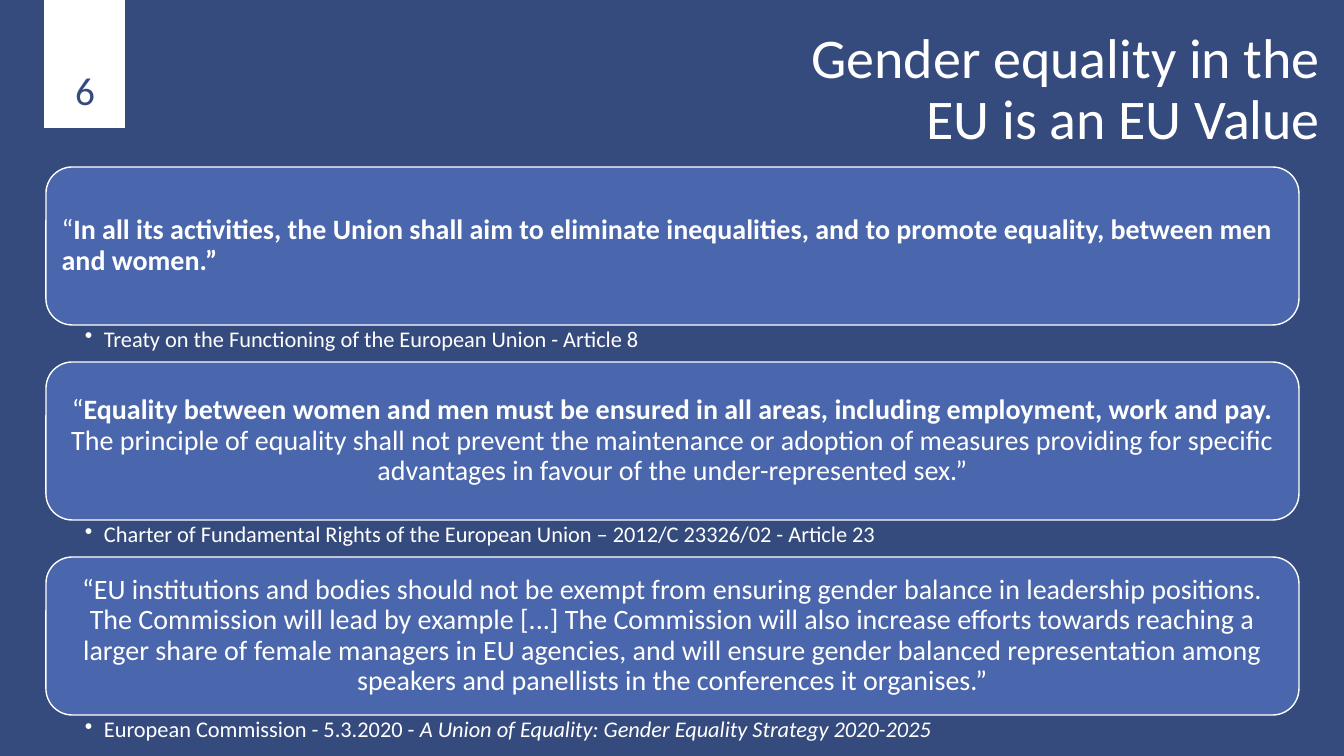
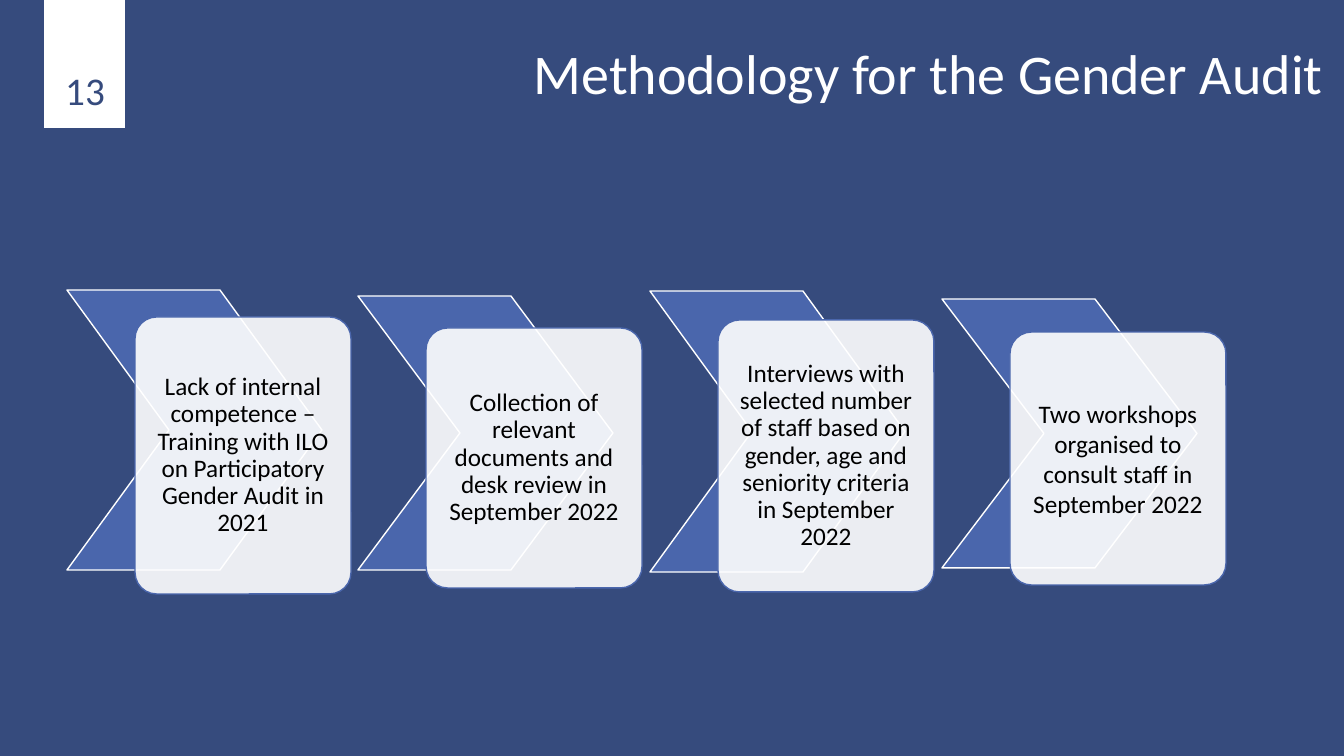
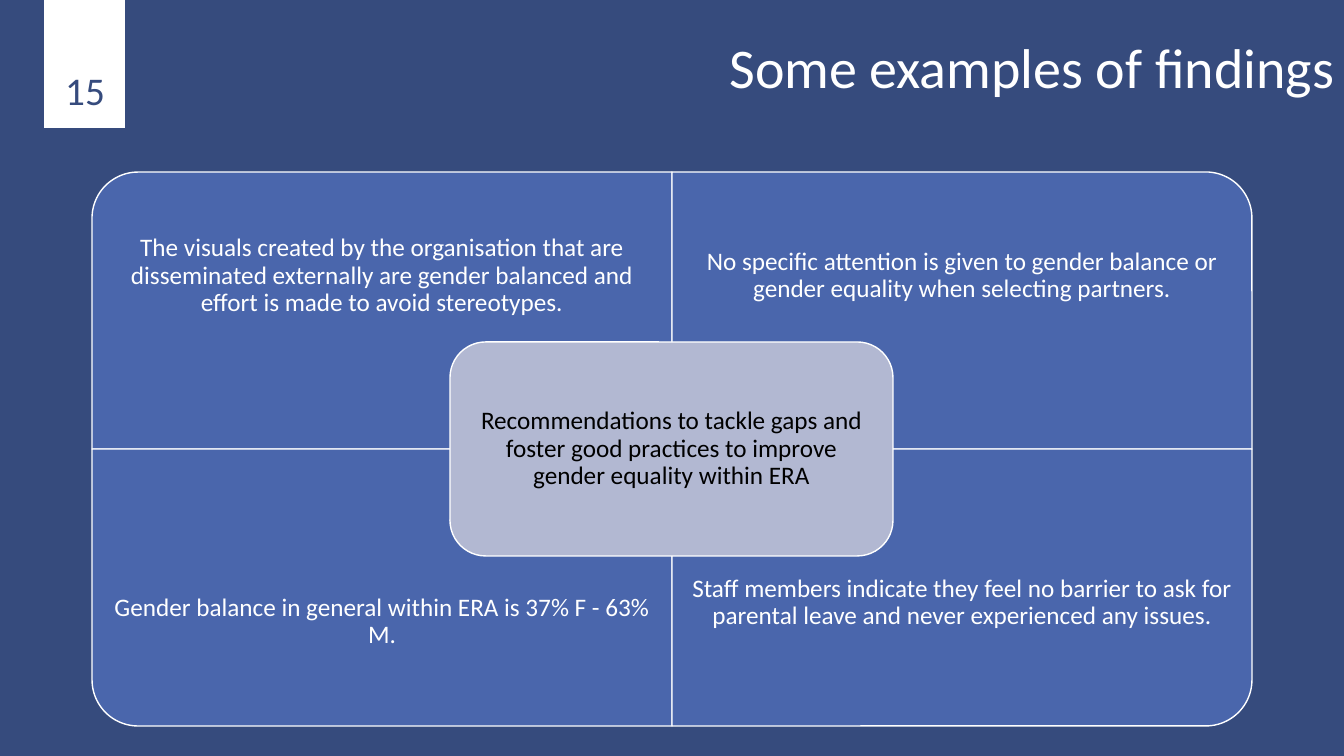
import pptx
import pptx.util
import pptx.dml.color
import pptx.enum.shapes
import pptx.enum.text
import pptx.oxml
import pptx.oxml.ns

EMU_PER_PX = 12192000 / 1344
FONT = "Calibri"
COLORS = {
    "navy": "364B7D",
    "blue": "4A66AC",
    "pale": "B2B8D2",
    "white": "FFFFFF",
    "black": "000000",
}
SHAPE = pptx.enum.shapes.MSO_SHAPE
ALIGN = pptx.enum.text.PP_ALIGN
ANCHOR = pptx.enum.text.MSO_ANCHOR


def px(n):
    return pptx.util.Emu(round(n * EMU_PER_PX))


def rgb(name):
    return pptx.dml.color.RGBColor.from_string(COLORS[name])


class Deck:
    def __init__(self):
        self.prs = pptx.Presentation()
        self.prs.slide_width, self.prs.slide_height = px(1344), px(756)
        fill = self.prs.slide_master.background.fill
        fill.solid()
        fill.fore_color.rgb = rgb("navy")
        self.s = None

    def slide(self, number, title, title_box):
        """Start a slide with its number tab and title."""
        self.s = self.prs.slides.add_slide(self.prs.slide_layouts[6])
        self.shape(SHAPE.RECTANGLE, (44, 0, 81, 128), "white", line=None)
        self.text((13, 61, 144, 67), str(number), 28, "navy", insets=(10, 5, 10, 5),
                  anchor=ANCHOR.TOP, spacing=1.0)
        self.text(title_box, title, 40, insets=(10, 5, 10, 5), align=ALIGN.RIGHT)

    def shape(self, kind, box, fill, line="white", adj=None, rotation=0, opacity=None):
        sp = self.s.shapes.add_shape(kind, *map(px, box))
        sp.shadow.inherit = False
        sp.rotation = rotation
        if adj is not None:
            sp.adjustments[0] = adj
        sp.fill.solid()
        sp.fill.fore_color.rgb = rgb(fill)
        if opacity is not None:
            color = sp.fill._xPr.find(".//" + pptx.oxml.ns.qn("a:srgbClr"))
            alpha = pptx.oxml.parse_xml(
                f'<a:alpha {pptx.oxml.ns.nsdecls("a")} val="{opacity * 1000}"/>')
            color.append(alpha)
        if line:
            sp.line.color.rgb = rgb(line)
            sp.line.width = pptx.util.Pt(1)
        else:
            sp.line.fill.background()
        return sp

    def text(self, box, runs, size, color="white", **style):
        sp = self.s.shapes.add_textbox(*map(px, box))
        return self.label(sp, runs, size, color, **style)

    def label(self, sp, runs, size, color="white", insets=(14, 14, 14, 14),
              align=ALIGN.CENTER, anchor=ANCHOR.MIDDLE, spacing=0.9, bullet=False):
        """Fill a shape with one paragraph; runs are a string or (text, style) pairs."""
        tf = sp.text_frame
        tf.word_wrap = True
        tf.vertical_anchor = anchor
        tf.margin_left, tf.margin_top, tf.margin_right, tf.margin_bottom = map(px, insets)
        p = tf.paragraphs[0]
        if bullet:
            pPr = p._p.get_or_add_pPr()
            pPr.set("marL", str(px(19)))
            pPr.set("indent", str(px(-19)))
            pPr.append(pptx.oxml.parse_xml(
                f'<a:buChar {pptx.oxml.ns.nsdecls("a")} char="•"/>'))
        p.alignment = align
        p.line_spacing = spacing
        for content, mark in [(runs, "")] if isinstance(runs, str) else runs:
            r = p.add_run()
            r.text = content
            r.font.name = FONT
            r.font.size = pptx.util.Pt(size)
            r.font.color.rgb = rgb(color)
            r.font.bold = mark == "b"
            r.font.italic = mark == "i"
        return sp


def build_values(deck):
    deck.slide(6, "Gender equality in the EU is an EU Value", (794, 21, 536, 140))
    quotes = [
        ([("“", ""),
          ("In all its activities, the Union shall aim to eliminate inequalities, and to "
           "promote equality, between men and women.”", "b")],
         ALIGN.LEFT,
         "Treaty on the Functioning of the European Union - Article 8"),
        ([("“", ""),
          ("Equality between women and men must be ensured in all areas, including "
           "employment, work and pay. ", "b"),
          ("The principle of equality shall not prevent the maintenance or adoption of "
           "measures providing for specific advantages in favour of the "
           "under-represented sex.”", "")],
         ALIGN.CENTER,
         "Charter of Fundamental Rights of the European Union – 2012/C 23326/02 - Article 23"),
        ("“EU institutions and bodies should not be exempt from ensuring gender balance in "
         "leadership positions. The Commission will lead by example [...] The Commission "
         "will also increase efforts towards reaching a larger share of female managers in "
         "EU agencies, and will ensure gender balanced representation among speakers and "
         "panellists in the conferences it organises.”",
         ALIGN.CENTER,
         [("European Commission - 5.3.2020 - ", ""),
          ("A Union of Equality: Gender Equality Strategy 2020-2025", "i")]),
    ]
    left, width, height = 46, 1253, 158
    for i, (quote, align, reference) in enumerate(quotes):
        top = 167 + 195 * i
        sp = deck.shape(SHAPE.ROUNDED_RECTANGLE, (left, top, width, height), "blue")
        deck.label(sp, quote, 20, insets=(8, 8, 8, 8), align=align)
        deck.text((left, top + height, width, 36), reference, 16, insets=(39, 3, 16, 3),
                  align=ALIGN.LEFT, anchor=ANCHOR.TOP, bullet=True)


def build_methodology(deck):
    deck.slide(13, "Methodology for the Gender Audit", (491, 6, 842, 140))
    # Chevron top and height, card top and height, line spacing, text
    steps = [
        (290, 280, 317, 277, 0.9,
         "Lack of internal competence – Training with ILO on Participatory "
         "Gender Audit in 2021"),
        (296, 274, 328, 260, 0.9,
         "Collection of relevant documents and desk review in September 2022"),
        (291, 281, 320, 272, 0.9,
         "Interviews with selected number of staff based on gender, age and seniority "
         "criteria in September 2022"),
        (299, 269, 332, 253, 1.0,
         "Two workshops organised to consult staff in September 2022"),
    ]
    for i, (top, height, card_top, card_height, spacing, step) in enumerate(steps):
        left = 67 + 875 * i // 3
        deck.shape(SHAPE.CHEVRON, (left, top, 255, height), "blue", adj=0.4)
        card = deck.shape(SHAPE.ROUNDED_RECTANGLE, (left + 68, card_top, 216, card_height),
                          "white", line="blue", adj=0.1, opacity=90)
        deck.label(card, step, 18, "black", spacing=spacing)


def build_findings(deck):
    deck.slide(15, "Some examples of findings", (656, 0, 688, 140))
    center_x, center_y, width, height, text_height = 672, 449, 580, 277, 208
    # Column, row, rotation, bottom inset, text
    findings = [
        (0, 0, 270, 14, "The visuals created by the organisation that are disseminated "
                        "externally are gender balanced and effort is made to avoid "
                        "stereotypes."),
        (1, 0, 0, 14, "No specific attention is given to gender balance or gender equality "
                      "when selecting partners."),
        (0, 1, 180, 14, "Gender balance in general within ERA is 37% F - 63% M."),
        (1, 1, 90, 52, "Staff members indicate they feel no barrier to ask for parental "
                       "leave and never experienced any issues."),
    ]
    for col, row, rotation, bottom, finding in findings:
        left = center_x + (col - 1) * width
        top = center_y + (row - 1) * height
        # A quarter turn swaps the sides around the same centre
        w, h = (height, width) if rotation % 180 else (width, height)
        box = (left + (width - w) / 2, top + (height - h) / 2, w, h)
        deck.shape(SHAPE.ROUND_1_RECTANGLE, box, "blue", rotation=rotation)
        text_top = top + row * (height - text_height)
        deck.text((left, text_top, width, text_height), finding, 18,
                  insets=(14, 14, 14, bottom))
    hub = deck.shape(SHAPE.ROUNDED_RECTANGLE, (center_x - 222, center_y - 107, 443, 214), "pale")
    deck.label(hub, "Recommendations to tackle gaps and foster good practices to improve "
                    "gender equality within ERA", 18, "black", insets=(7, 7, 7, 7))


def main():
    deck = Deck()
    build_values(deck)
    build_methodology(deck)
    build_findings(deck)
    deck.prs.save("out.pptx")


if __name__ == "__main__":
    main()
